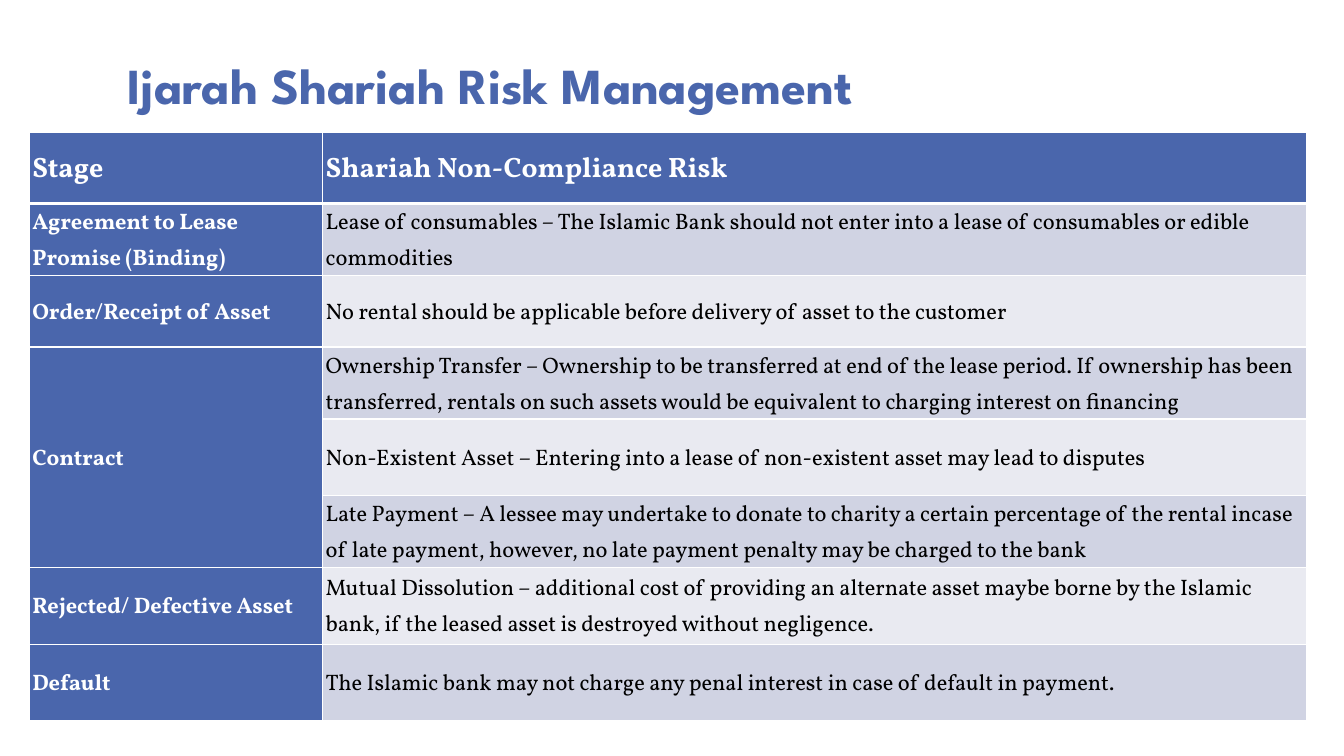
from lxml import etree
from pptx import Presentation
from pptx import util as u
from pptx.dml.color import RGBColor
from pptx.enum import text
from pptx.oxml import ns

BLUE = RGBColor(0x4A, 0x66, 0xAC)
BAND_DARK = RGBColor(0xD0, 0xD3, 0xE3)
BAND_LIGHT = RGBColor(0xE9, 0xEA, 0xF1)
WHITE = RGBColor(0xFF, 0xFF, 0xFF)
BLACK = RGBColor(0, 0, 0)

HEADINGS = ("Stage", "Shariah Non-Compliance Risk")
RISKS_BY_STAGE = [
    ("Agreement to Lease Promise (Binding)", [
        "Lease of consumables – The Islamic Bank should not enter into a lease of "
        "consumables or edible commodities"]),
    ("Order/Receipt of Asset", [
        "No rental should be applicable before delivery of asset to the customer"]),
    ("Contract", [
        "Ownership Transfer – Ownership to be transferred at end of the lease period. "
        "If ownership has been transferred, rentals on such assets would be equivalent "
        "to charging interest on financing",
        "Non-Existent Asset – Entering into a lease of non-existent asset may lead to disputes",
        "Late Payment – A lessee may undertake to donate to charity a certain percentage "
        "of the rental incase of late payment, however, no late payment penalty may be "
        "charged to the bank"]),
    ("Rejected/ Defective Asset", [
        "Mutual Dissolution – additional cost of providing an alternate asset maybe borne "
        "by the Islamic bank, if the leased asset is destroyed without negligence."]),
    ("Default", [
        "The Islamic bank may not charge any penal interest in case of default in payment."]),
]
COLUMN_WIDTHS = (2.91, 9.76)
ROW_HEIGHTS = (0.71, 0.71, 0.71, 0.71, 0.76, 0.71, 0.76, 0.76)


class RiskSlide:
    title_font = "League Spartan"
    body_font = "Vollkorn"

    def __init__(self, deck):
        self.slide = deck.slides.add_slide(deck.slide_layouts[5])

    def style(self, paragraph, font, size, color, bold, spacing):
        paragraph.alignment = text.PP_ALIGN.LEFT
        paragraph.line_spacing = spacing
        paragraph.font.name = font
        paragraph.font.size = u.Pt(size)
        paragraph.font.bold = bold
        paragraph.font.color.rgb = color

    def title(self, wording, left, top, width, height):
        heading = self.slide.shapes.title
        heading.left, heading.top = u.Inches(left), u.Inches(top)
        heading.width, heading.height = u.Inches(width), u.Inches(height)
        frame = heading.text_frame
        frame.text = wording
        frame.word_wrap = True
        frame.auto_size = text.MSO_AUTO_SIZE.NONE
        frame.vertical_anchor = text.MSO_ANCHOR.BOTTOM
        self.style(frame.paragraphs[0], self.title_font, 36, BLUE, True, 0.8)

    def table(self, left, top, widths, heights):
        grid = self.slide.shapes.add_table(
            len(heights), len(widths), u.Inches(left), u.Inches(top),
            u.Inches(sum(widths)), u.Inches(sum(heights))).table
        for column, width in zip(grid.columns, widths):
            column.width = u.Inches(width)
        for row, height in zip(grid.rows, heights):
            row.height = u.Inches(height)
        return grid

    def borders(self, cell, top, bottom):
        properties = cell._tc.get_or_add_tcPr()
        for side, points in (("L", 1), ("R", 1), ("T", top), ("B", bottom)):
            line = etree.SubElement(properties, ns.qn(f"a:ln{side}"), w=str(u.Pt(points)))
            fill = etree.SubElement(line, ns.qn("a:solidFill"))
            etree.SubElement(fill, ns.qn("a:srgbClr"), val=str(WHITE))

    def cell(self, grid, row, column, wording, fill, size=16, color=WHITE, bold=True):
        cell = grid.cell(row, column)
        self.borders(cell, 3 if row == 1 else 1, 3 if row == 0 else 1)
        cell.fill.solid()
        cell.fill.fore_color.rgb = fill
        cell.margin_left = cell.margin_right = u.Inches(0.03)
        cell.margin_top = cell.margin_bottom = 0
        cell.vertical_anchor = text.MSO_ANCHOR.MIDDLE
        if wording:
            cell.text = wording
            self.style(cell.text_frame.paragraphs[0], self.body_font, size, color, bold, 1.15)


def main():
    deck = Presentation()
    deck.slide_width, deck.slide_height = u.Inches(13.33), u.Inches(7.5)
    page = RiskSlide(deck)
    page.title("Ijarah Shariah Risk Management", 1.16, 0.01, 9.5, 1.17)

    grid = page.table(0.29, 1.31, COLUMN_WIDTHS, ROW_HEIGHTS)
    for column, heading in enumerate(HEADINGS):
        page.cell(grid, 0, column, heading, BLUE, size=20)
    row = 1
    for stage, risks in RISKS_BY_STAGE:
        first = row
        for risk in risks:
            page.cell(grid, row, 0, stage if row == first else "", BLUE)
            band = BAND_DARK if row % 2 else BAND_LIGHT
            page.cell(grid, row, 1, risk, band, color=BLACK, bold=False)
            row += 1
        if len(risks) > 1:
            grid.cell(first, 0).merge(grid.cell(row - 1, 0))

    deck.save("out.pptx")


if __name__ == "__main__":
    main()
